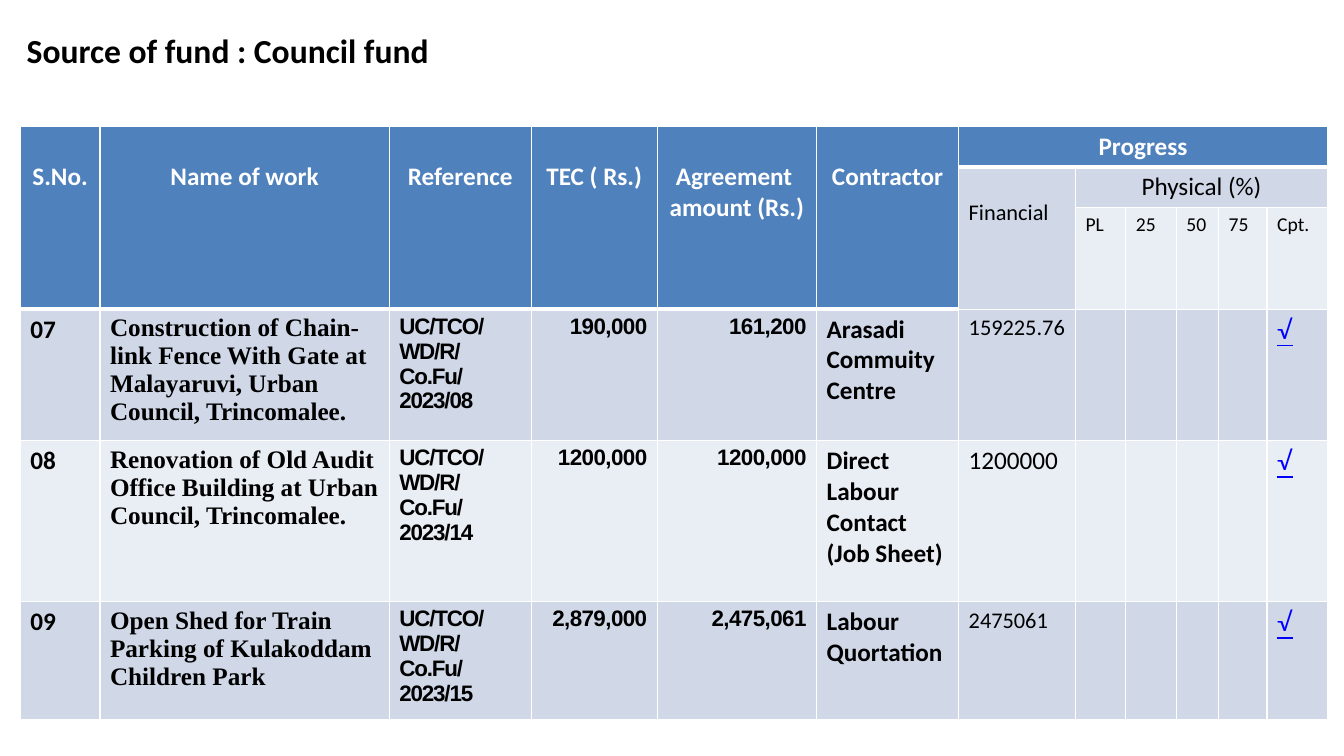
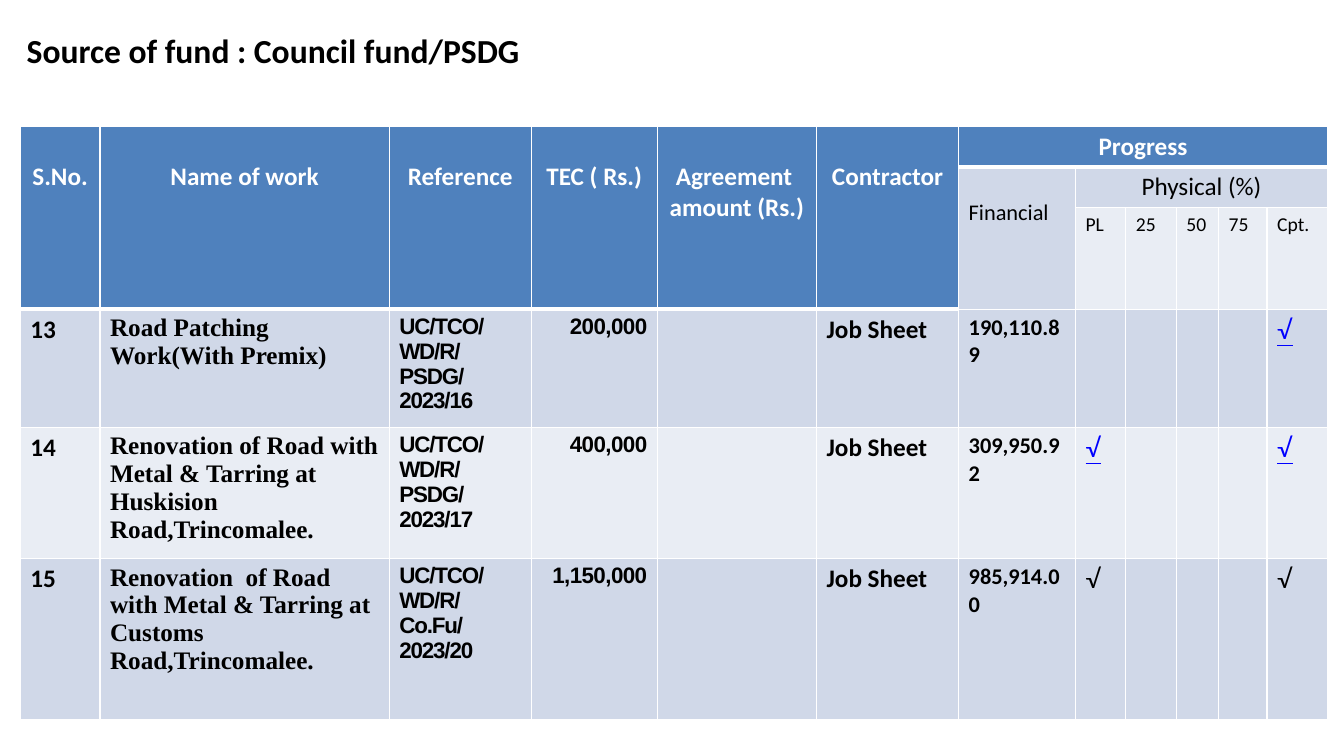
from lxml import etree
from pptx import Presentation
from pptx.dml.color import RGBColor
from pptx.enum import text
from pptx.oxml import ns
from pptx.util import Pt

BLUE = RGBColor(0x4F, 0x81, 0xBD)
BAND_DARK = RGBColor(0xD0, 0xD8, 0xE8)
BAND_LIGHT = RGBColor(0xE9, 0xED, 0xF4)
WHITE = RGBColor(0xFF, 0xFF, 0xFF)
BLACK = RGBColor(0, 0, 0)
LINK_BLUE = RGBColor(0, 0, 0xFF)

LEFT, CENTER, RIGHT = text.PP_ALIGN.LEFT, text.PP_ALIGN.CENTER, text.PP_ALIGN.RIGHT

COLUMN_WIDTHS = [56.9, 206.6, 101.5, 90, 113.8, 101.5, 83.5, 36, 36, 30.2, 34.6, 43.2]
HEADER_HEIGHTS = [29.2, 29.2, 71.6]
HEADINGS = ["S.No.", "Name of work", "Reference", "TEC ( Rs.)",
            "Agreement \namount (Rs.)", "Contractor"]
STAGES = ["PL", "25", "50", "75", "Cpt."]
FINANCIAL, FIRST_STAGE, LAST_COLUMN = 6, 7, 11

# Style of each body column up to Contractor: font, size, alignment, letter spacing
BODY_STYLES = [
    ("Calibri", 18, LEFT, 0),
    ("Times New Roman", 18, LEFT, 0),
    ("Arial", 16, LEFT, -0.8),
    ("Arial", 16, RIGHT, -0.4),
    ("Arial", 16, RIGHT, -0.4),
    ("Calibri", 18, LEFT, 0),
]

# Each work: height, column texts, (financial, size, bold), ticked stages, tick is a link
SLIDES = [
    ("Source of fund : Council fund", 365, [
        (94, ["07", "Construction of Chain-link Fence With Gate at Malayaruvi, "
              "Urban Council, Trincomalee.", "UC/TCO/WD/R/Co.Fu/\n2023/08",
              "190,000", "161,200", "Arasadi Commuity Centre"],
         ("159225.76", 16, False), ["Cpt."], True),
        (115, ["08", "Renovation of Old Audit Office Building at Urban Council, "
               "Trincomalee.", "UC/TCO/WD/R/Co.Fu/\n2023/14",
               "1200,000", "1200,000", "Direct Labour Contact\n(Job Sheet)"],
         ("1200000", 18, False), ["Cpt."], True),
        (84, ["09", "Open Shed for Train Parking of Kulakoddam Children Park",
              "UC/TCO/WD/R/Co.Fu/\n2023/15",
              "2,879,000", "2,475,061", "Labour Quortation"],
         ("2475061", 16, False), ["Cpt."], True),
    ]),
    ("Source of fund : Council fund/PSDG", 432, [
        (84.5, ["13", "Road Patching Work(With Premix)",
                "UC/TCO/WD/R/PSDG/\n2023/16", "200,000", "", "Job Sheet"],
         ("190,110.89", 16, True), ["Cpt."], True),
        (93.5, ["14", "Renovation of Road with Metal & Tarring at Huskision "
                "Road,Trincomalee.",
                "UC/TCO/WD/R/PSDG/\n2023/17", "400,000", "", "Job Sheet"],
         ("309,950.92", 16, True), ["PL", "Cpt."], True),
        (115, ["15", "Renovation  of Road with Metal & Tarring at Customs "
               "Road,Trincomalee.",
               "UC/TCO/WD/R/Co.Fu/\n2023/20", "1,150,000", "", "Job Sheet"],
         ("985,914.00", 16, True), ["PL", "Cpt."], False),
    ]),
]


def write(frame, content, font="Calibri", size=18, color=BLACK, bold=False,
          align=LEFT, spacing=0, underline=False):
    for index, line in enumerate(content.split("\n")):
        paragraph = frame.add_paragraph() if index else frame.paragraphs[0]
        paragraph.alignment = align
        if not line:
            continue
        run = paragraph.add_run()
        run.text = line
        run.font.name = font
        run.font.size = Pt(size)
        run.font.bold = bold
        run.font.underline = underline
        run.font.color.rgb = color
        if spacing:
            run.font._element.set("spc", str(round(spacing * 100)))


def paint(cell, fill, bottom=1):
    # Borders come before the fill in the cell properties
    properties = cell._tc.get_or_add_tcPr()
    for side, width in (("L", 1), ("R", 1), ("T", 1), ("B", bottom)):
        line = etree.SubElement(properties, ns.qn(f"a:ln{side}"), w=str(Pt(width)))
        solid = etree.SubElement(line, ns.qn("a:solidFill"))
        etree.SubElement(solid, ns.qn("a:srgbClr"), val=str(WHITE))
    cell.fill.solid()
    cell.fill.fore_color.rgb = fill


presentation = Presentation()
presentation.slide_width = Pt(960)
presentation.slide_height = Pt(540)

for title, title_width, works in SLIDES:
    slide = presentation.slides.add_slide(presentation.slide_layouts[6])

    # Title
    box = slide.shapes.add_textbox(Pt(12), Pt(18), Pt(title_width), Pt(36))
    box.text_frame.word_wrap = True
    write(box.text_frame, title, size=24, bold=True)

    # Table grid
    heights = HEADER_HEIGHTS + [work[0] for work in works]
    table = slide.shapes.add_table(
        len(heights), len(COLUMN_WIDTHS), Pt(14.5), Pt(90),
        Pt(sum(COLUMN_WIDTHS)), Pt(sum(heights))).table
    table.first_row = table.horz_banding = False
    for column, width in zip(table.columns, COLUMN_WIDTHS):
        column.width = Pt(width)
    for row, height in zip(table.rows, heights):
        row.height = Pt(height)

    # Fills and borders
    for row_index in range(len(heights)):
        for column_index in range(len(COLUMN_WIDTHS)):
            cell = table.cell(row_index, column_index)
            if row_index == 0 or (row_index < 3 and column_index < FINANCIAL):
                paint(cell, BLUE, bottom=3)
            else:
                paint(cell, BAND_DARK if row_index % 2 else BAND_LIGHT)

    # Header
    for column_index, heading in enumerate(HEADINGS):
        cell = table.cell(0, column_index)
        cell.merge(table.cell(2, column_index))
        cell.margin_top = Pt(25.6)
        write(cell.text_frame, heading, color=WHITE, bold=True, align=CENTER)
    progress = table.cell(0, FINANCIAL)
    progress.merge(table.cell(0, LAST_COLUMN))
    write(progress.text_frame, "Progress", color=WHITE, bold=True, align=CENTER)
    financial = table.cell(1, FINANCIAL)
    financial.merge(table.cell(2, FINANCIAL))
    financial.margin_top = Pt(23.1)
    write(financial.text_frame, "Financial", size=16)
    physical = table.cell(1, FIRST_STAGE)
    physical.merge(table.cell(1, LAST_COLUMN))
    write(physical.text_frame, "Physical (%)", align=CENTER)
    for column_index, stage in enumerate(STAGES, FIRST_STAGE):
        write(table.cell(2, column_index).text_frame, stage, size=14)

    # Works
    for row_index, (_, entries, payment, ticked, linked) in enumerate(works, 3):
        for column_index, (entry, style) in enumerate(zip(entries, BODY_STYLES)):
            font, size, align, spacing = style
            write(table.cell(row_index, column_index).text_frame, entry, font, size,
                  bold=True, align=align, spacing=spacing)
        amount, size, bold = payment
        write(table.cell(row_index, FINANCIAL).text_frame, amount, size=size, bold=bold)
        for stage in ticked:
            cell = table.cell(row_index, FIRST_STAGE + STAGES.index(stage))
            write(cell.text_frame, "√", "Lato", underline=linked,
                  color=LINK_BLUE if linked else BLACK)

presentation.save("out.pptx")
